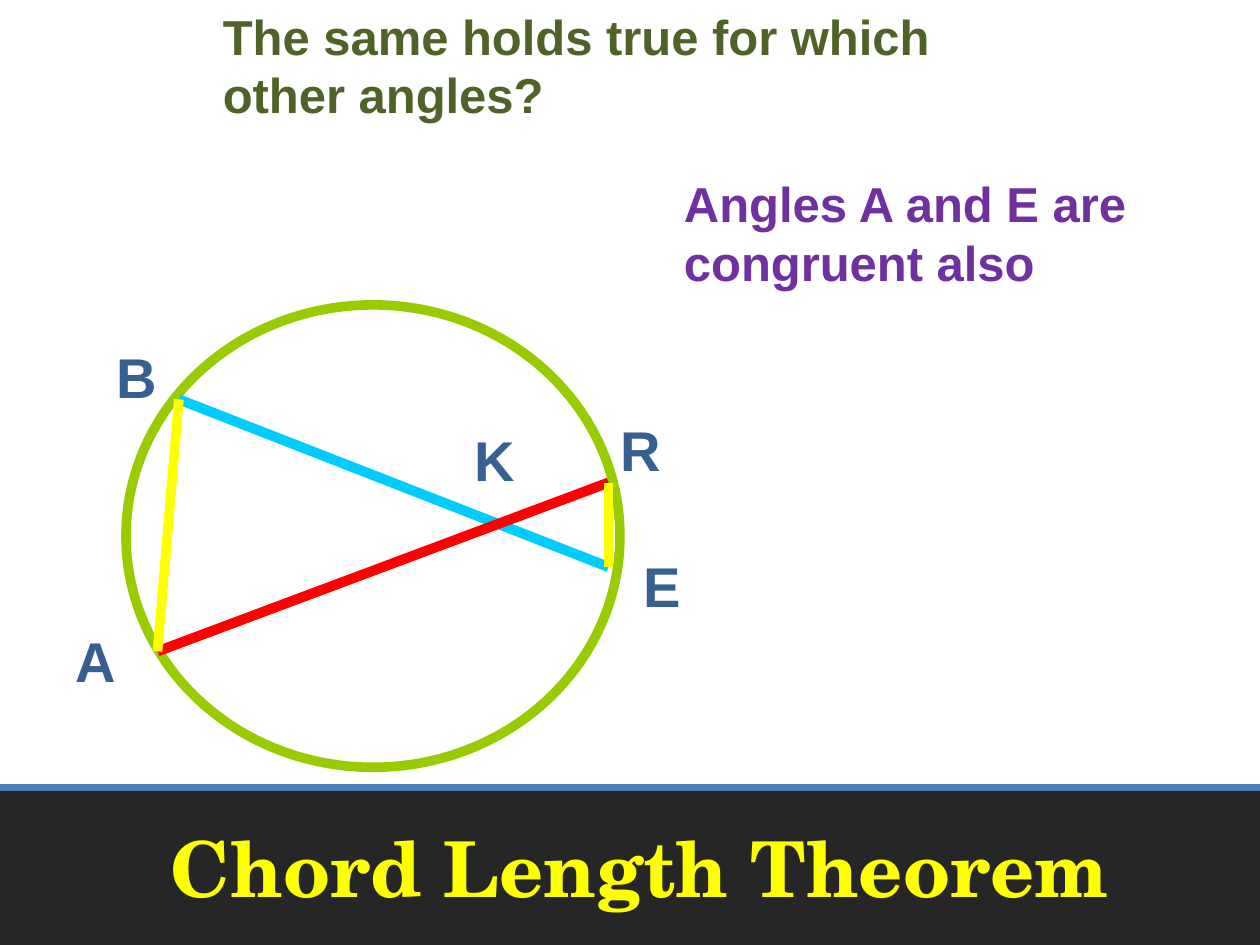
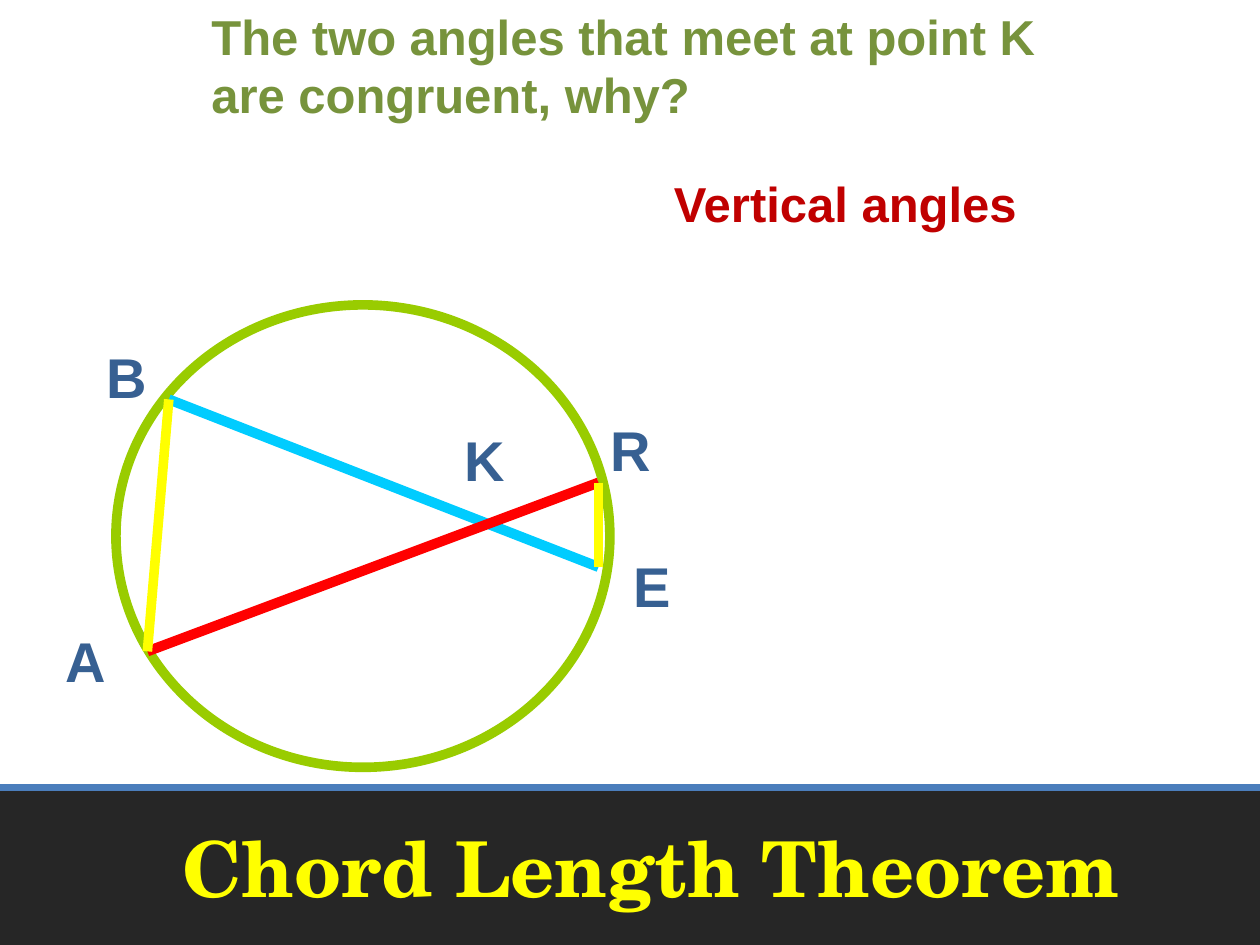
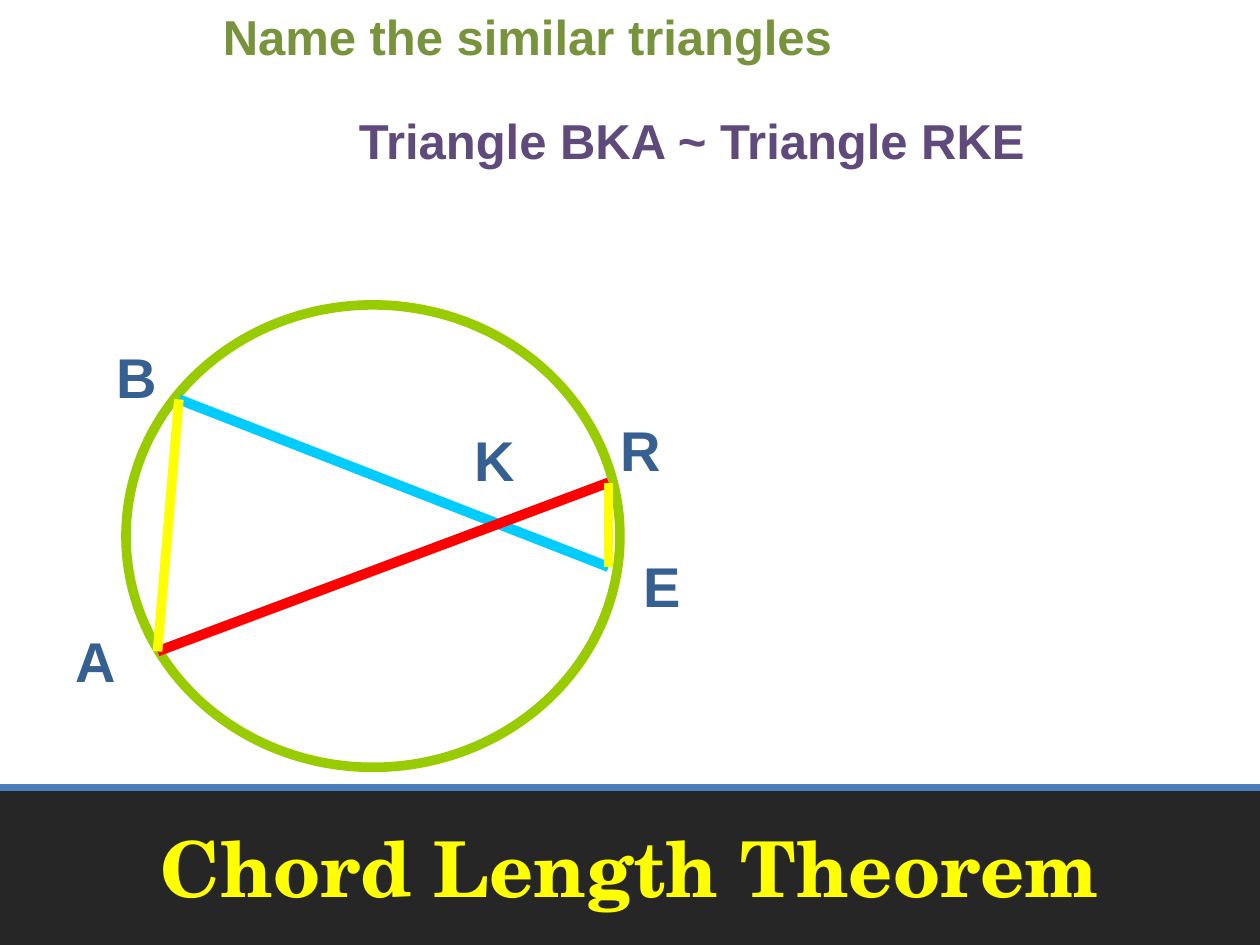
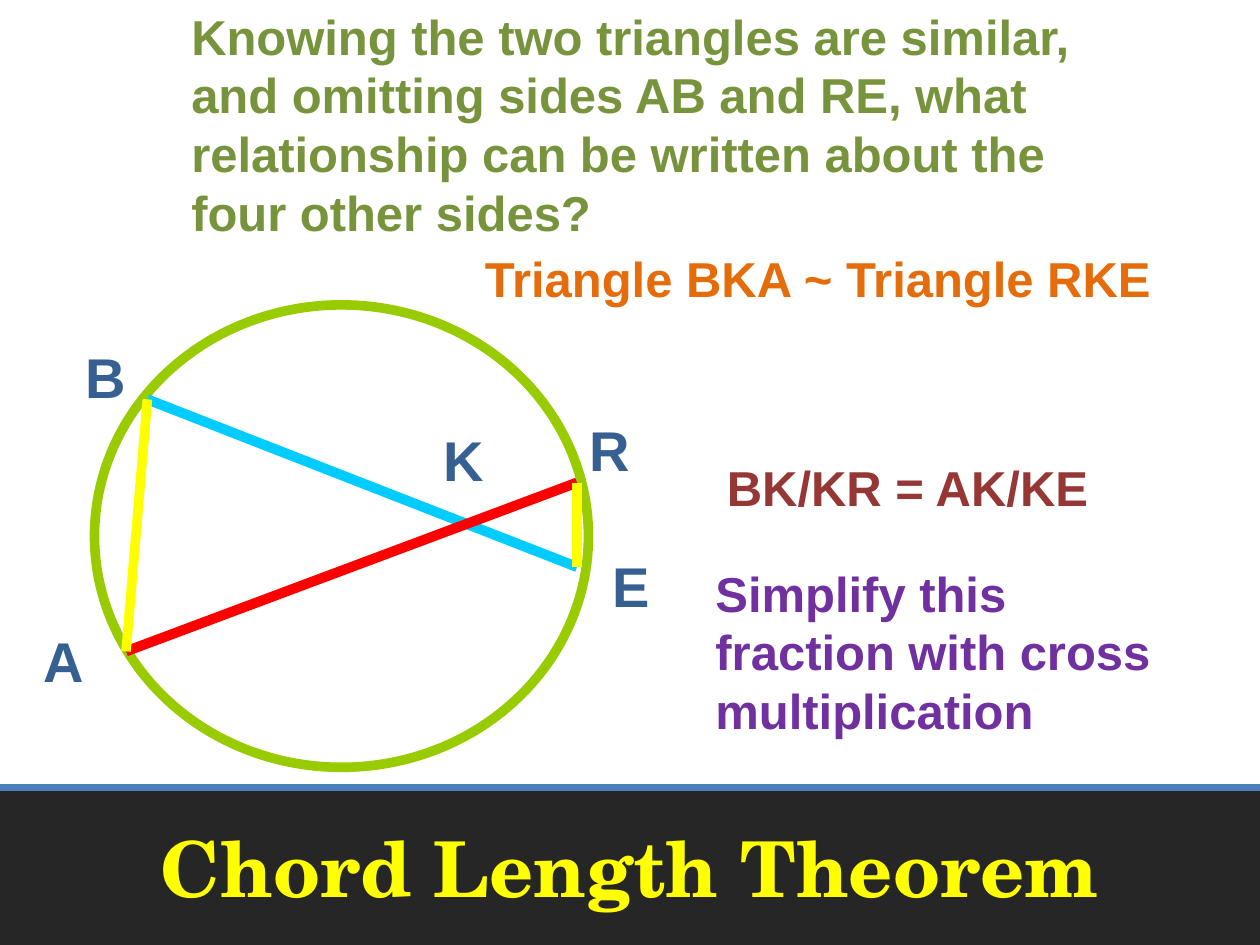
"""Build four slides that derive the chord length theorem from similar triangles."""
from dataclasses import dataclass

from lxml import etree
from pptx import Presentation
from pptx import util as u
from pptx.dml.color import RGBColor
from pptx.enum import shapes, text
from pptx.oxml.ns import qn

TITLE = "Chord Length Theorem"
SLIDES = [
    {"title_left": 0.58, "circle_left": 1, "notes": [
        ("The same holds true for which other angles?", (1.67, 0, 6.77, 1.03), "moss"),
        ("Angles A and E are congruent also", (5.33, 1.33, 4.67, 1.03), "purple"),
    ]},
    {"title_left": 0.67, "circle_left": 0.92, "notes": [
        ("The two angles that meet at point K are congruent, why?", (1.58, 0, 6.77, 1.03), "olive"),
        ("Vertical angles", (5.25, 1.33, 3.5, 0.57), "crimson"),
    ]},
    {"title_left": 0.5, "circle_left": 1, "notes": [
        ("Name the similar triangles", (1.67, 0, 5.33, 0.57), "olive"),
        ("Triangle BKA ~ Triangle RKE", (2.75, 0.83, 5.75, 0.57), "violet"),
    ]},
    {"title_left": 0.5, "circle_left": 0.75, "notes": [
        ("Knowing the two triangles are similar, and omitting sides AB and RE, "
         "what relationship can be written about the four other sides?",
         (1.42, 0, 7.83, 1.97), "olive"),
        ("BK/KR = AK/KE", (5.67, 3.58, 3.75, 0.57), "brick"),
        ("Triangle BKA ~ Triangle RKE", (3.75, 1.92, 5.75, 0.57), "orange"),
        ("Simplify this fraction with cross multiplication", (5.58, 4.42, 3.75, 1.5), "purple"),
    ]},
]

CIRCLE_TOP, CIRCLE_WIDTH, CIRCLE_HEIGHT = 2.42, 3.92, 3.67
POINTS = {"B": (0.42, 3.17), "A": (0.25, 5.17), "R": (3.83, 3.83), "E": (3.83, 4.5)}
CHORDS = [("BE", "cyan", 5.75), ("AR", "red", 5.75), ("BA", "yellow", 5.5), ("RE", "yellow", 5.5)]
LABELS = {"B": (-0.17, 2.67), "R": (3.83, 3.25), "E": (4.01, 4.33), "A": (-0.5, 4.92), "K": (2.67, 3.33)}
LABEL_SIZE = (0.52, 0.63)
SLIDE_WIDTH, SLIDE_HEIGHT = 10, 7.5
BAND_TOP, BAND_HEIGHT, TITLE_WIDTH = 6.25, 1.25, 9


@dataclass(frozen=True)
class Theme:
    title_font: str = "TeX Gyre Schola"
    body_font: str = "Arial"
    title_size: float = 44
    label_size: float = 32
    note_size: float = 28
    circle_line: float = 5.5
    band_line: float = 4
    band: str = "262626"
    rule: str = "4B7EBC"
    yellow: str = "FFFF00"
    lime: str = "99CC00"
    cyan: str = "00CCFF"
    red: str = "FF0000"
    label: str = "376092"
    moss: str = "4F6228"
    olive: str = "77933C"
    purple: str = "7030A0"
    violet: str = "604A7B"
    crimson: str = "C00000"
    brick: str = "953735"
    orange: str = "E46C0A"

    def color(self, name):
        return RGBColor.from_string(getattr(self, name))


THEME = Theme()


def box(*lengths):
    return [u.Inches(length) for length in lengths]


def style_text(paragraph, font_name, size, color):
    font = paragraph.font
    font.name, font.size, font.bold = font_name, u.Pt(size), True
    font.color.rgb = THEME.color(color)


def add_line(slide, start, end, color, width):
    line = slide.shapes.add_connector(shapes.MSO_CONNECTOR.STRAIGHT, *box(*start, *end))
    line.line.color.rgb = THEME.color(color)
    line.line.width = u.Pt(width)
    etree.SubElement(line.element.spPr, qn("a:effectLst"))
    return line


def add_text(slide, content, place, size, color, wrap):
    shape = slide.shapes.add_textbox(*box(*place))
    frame = shape.text_frame
    frame.word_wrap = wrap
    frame.auto_size = text.MSO_AUTO_SIZE.SHAPE_TO_FIT_TEXT
    frame.text = content
    style_text(frame.paragraphs[0], THEME.body_font, size, color)


def add_band_to_layout(layout, slide):
    band = slide.shapes.add_shape(
        shapes.MSO_SHAPE.RECTANGLE, *box(0, BAND_TOP, SLIDE_WIDTH, BAND_HEIGHT))
    band.shadow.inherit = False
    band.fill.solid()
    band.fill.fore_color.rgb = THEME.color("band")
    band.line.fill.background()
    rule = add_line(slide, (0, BAND_TOP), (SLIDE_WIDTH, BAND_TOP), "rule", THEME.band_line)
    for position, shape in enumerate((band, rule), start=2):
        layout.shapes.element.insert(position, shape.element)


def set_title(slide, left):
    title = slide.shapes.title
    title.left, title.top, title.width, title.height = box(left, BAND_TOP, TITLE_WIDTH, BAND_HEIGHT)
    frame = title.text_frame
    frame.text = TITLE
    frame.auto_size = text.MSO_AUTO_SIZE.NONE
    frame.vertical_anchor = text.MSO_ANCHOR.MIDDLE
    frame.paragraphs[0].alignment = text.PP_ALIGN.CENTER
    style_text(frame.paragraphs[0], THEME.title_font, THEME.title_size, "yellow")


def add_diagram(slide, left):
    circle = slide.shapes.add_shape(
        shapes.MSO_SHAPE.OVAL, *box(left, CIRCLE_TOP, CIRCLE_WIDTH, CIRCLE_HEIGHT))
    circle.shadow.inherit = False
    circle.fill.background()
    circle.line.color.rgb = THEME.color("lime")
    circle.line.width = u.Pt(THEME.circle_line)
    for ends, color, width in CHORDS:
        start, end = [(left + POINTS[name][0], POINTS[name][1]) for name in ends]
        add_line(slide, start, end, color, width)
    for name, (offset, top) in LABELS.items():
        add_text(slide, name, (left + offset, top, *LABEL_SIZE), THEME.label_size, "label", False)


def main():
    presentation = Presentation()
    presentation.slide_width, presentation.slide_height = box(SLIDE_WIDTH, SLIDE_HEIGHT)
    layout = presentation.slide_layouts.get_by_name("Title Only")
    for number, content in enumerate(SLIDES):
        slide = presentation.slides.add_slide(layout)
        if number == 0:
            add_band_to_layout(layout, slide)
        set_title(slide, content["title_left"])
        add_diagram(slide, content["circle_left"])
        for note, place, color in content["notes"]:
            add_text(slide, note, place, THEME.note_size, color, True)
    presentation.save("out.pptx")


if __name__ == "__main__":
    main()
